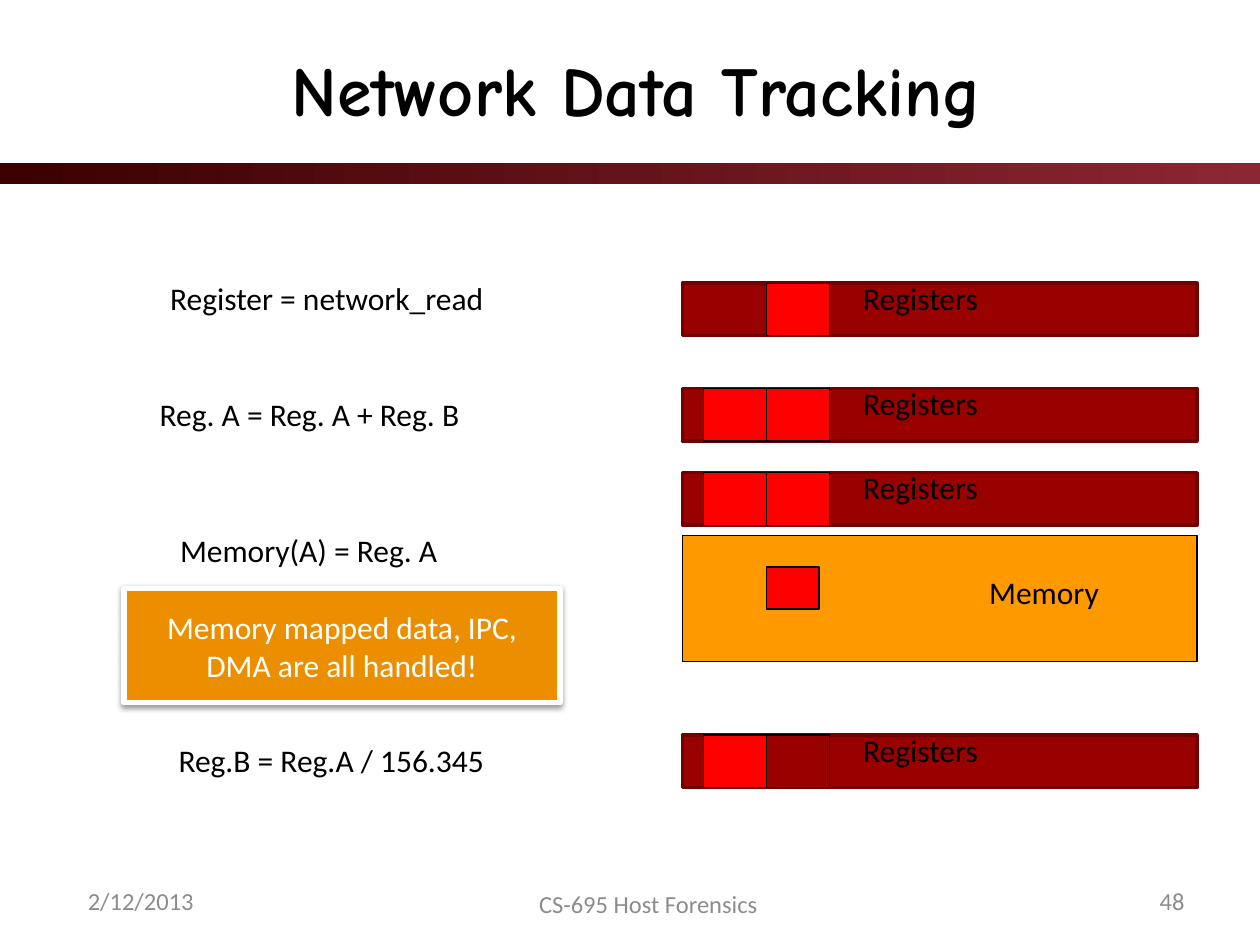
from lxml import etree
from pptx import Presentation
from pptx.dml.color import RGBColor
from pptx.enum.shapes import MSO_SHAPE
from pptx.enum.text import MSO_ANCHOR, PP_ALIGN
from pptx.oxml.ns import qn
from pptx.util import Cm, Pt

RECT = MSO_SHAPE.RECTANGLE
LEFT, CENTER, RIGHT = PP_ALIGN.LEFT, PP_ALIGN.CENTER, PP_ALIGN.RIGHT
TOP, MIDDLE = MSO_ANCHOR.TOP, MSO_ANCHOR.MIDDLE

BLACK = RGBColor(0x00, 0x00, 0x00)
WHITE = RGBColor(0xFF, 0xFF, 0xFF)
GRAY = RGBColor(0x8C, 0x8C, 0x8C)
DARK_MAROON = RGBColor(0x3C, 0x00, 0x00)
MAROON = RGBColor(0x8C, 0x26, 0x33)
REGISTER = RGBColor(0x99, 0x00, 0x00)
REGISTER_EDGE = RGBColor(0x71, 0x00, 0x00)
TAINTED = RGBColor(0xFF, 0x00, 0x00)
MEMORY = RGBColor(0xFF, 0x99, 0x00)
CALLOUT = RGBColor(0xEB, 0x8F, 0x00)

BAR_X, BAR_W, BAR_H = 13.76, 10.37, 1.06
CELL_A, CELL_B, CELL_W = 14.18, 15.45, 1.27
TEXT_H = 1.27


class Deck:
    """Holds the text style and the slide being drawn; lengths are in cm."""

    font = "Calibri"
    size = 18

    def __init__(self, prs):
        self.slide = prs.slides.add_slide(prs.slide_layouts[6])

    def set_text(self, sp, text, size=None, color=BLACK, align=LEFT, anchor=TOP,
                 font=None, bold=False):
        tf = sp.text_frame
        tf.word_wrap = True
        tf.vertical_anchor = anchor
        tf.text = text
        p = tf.paragraphs[0]
        p.alignment = align
        r = p.runs[0]
        r.font.name = font or self.font
        r.font.size = Pt(size or self.size)
        r.font.bold = bold
        r.font.color.rgb = color

    def label(self, x, y, w, h, text, **style):
        sp = self.slide.shapes.add_textbox(Cm(x), Cm(y), Cm(w), Cm(h))
        self.set_text(sp, text, **style)

    def box(self, x, y, w, h, fill, line=BLACK, width=0.75):
        sp = self.slide.shapes.add_shape(RECT, Cm(x), Cm(y), Cm(w), Cm(h))
        sp.shadow.inherit = False
        sp.fill.solid()
        sp.fill.fore_color.rgb = fill
        sp.line.color.rgb = line
        sp.line.width = Pt(width)
        return sp

    def rule(self, x, y, w, h, start, end):
        """Draw a band that fades from start to end."""
        sp = self.box(x, y, w, h, start)
        sp.line.fill.background()
        sp.fill.gradient()
        sp.fill.gradient_angle = 0
        for stop, color in zip(sp.fill.gradient_stops, (start, end)):
            stop.color.rgb = color

    def registers(self, y, cells):
        """Draw a register bar with its label and (x, colour) cells."""
        self.box(BAR_X, y, BAR_W, BAR_H, REGISTER, REGISTER_EDGE, 2)
        self.label(17.15, y - 0.21, 4.02, TEXT_H, "Registers")
        for x, color in cells:
            self.box(x, y, CELL_W, BAR_H, color)

    def callout(self, x, y, w, h, text):
        sp = self.box(x, y, w, h, CALLOUT, WHITE, 3)
        self.set_text(sp, text, color=WHITE, align=CENTER, anchor=MIDDLE)
        effects = sp._element.spPr.find(qn("a:effectLst"))
        shadow = etree.SubElement(effects, qn("a:outerShdw"), blurRad=str(Pt(3.1)),
                                  dist=str(Pt(1.6)), dir="5400000", rotWithShape="0")
        color = etree.SubElement(shadow, qn("a:srgbClr"), val=str(BLACK))
        etree.SubElement(color, qn("a:alpha"), val="38000")


def main():
    prs = Presentation()
    prs.slide_width, prs.slide_height = Cm(25.4), Cm(19.05)
    deck = Deck(prs)

    deck.rule(0, 3.28, 25.4, 0.43, DARK_MAROON, MAROON)
    deck.label(1.52, 0.38, 22.61, 2.79, "Network Data Tracking", size=40,
               font="Comic Neue", bold=True, align=CENTER, anchor=MIDDLE)
    for x, y, w, text, align in (
        (1.52, 17.65, 4.65, "2/12/2013", LEFT),
        (9.91, 17.7, 6.32, "CS-695 Host Forensics", CENTER),
        (19.48, 17.65, 4.65, "48", RIGHT),
    ):
        deck.label(x, y, w, 1.02, text, size=14, color=GRAY, align=align, anchor=MIDDLE)

    for x, y, text in (
        (3.18, 5.51, "Register = network_read"),
        (2.97, 7.83, "Reg. A = Reg. A + Reg. B"),
        (3.38, 10.59, "Memory(A) = Reg. A"),
        (3.35, 14.82, "Reg.B = Reg.A / 156.345"),
    ):
        deck.label(x, y, 9, TEXT_H, text)

    both_tainted = ((CELL_B, TAINTED), (CELL_A, TAINTED))
    for y, cells in (
        (5.71, ((CELL_B, TAINTED),)),
        (7.83, both_tainted),
        (9.53, both_tainted),
        (14.82, ((CELL_B, REGISTER), (CELL_A, TAINTED))),
    ):
        deck.registers(y, cells)

    deck.box(BAR_X, 10.8, BAR_W, 2.54, MEMORY)
    deck.label(19.69, 11.43, 3.43, TEXT_H, "Memory")
    deck.box(CELL_B, 11.43, 1.06, 0.85, TAINTED)
    deck.callout(2.5, 11.86, 8.79, 2.31, "Memory mapped data, IPC, DMA are all handled!")

    prs.save("out.pptx")


if __name__ == "__main__":
    main()
